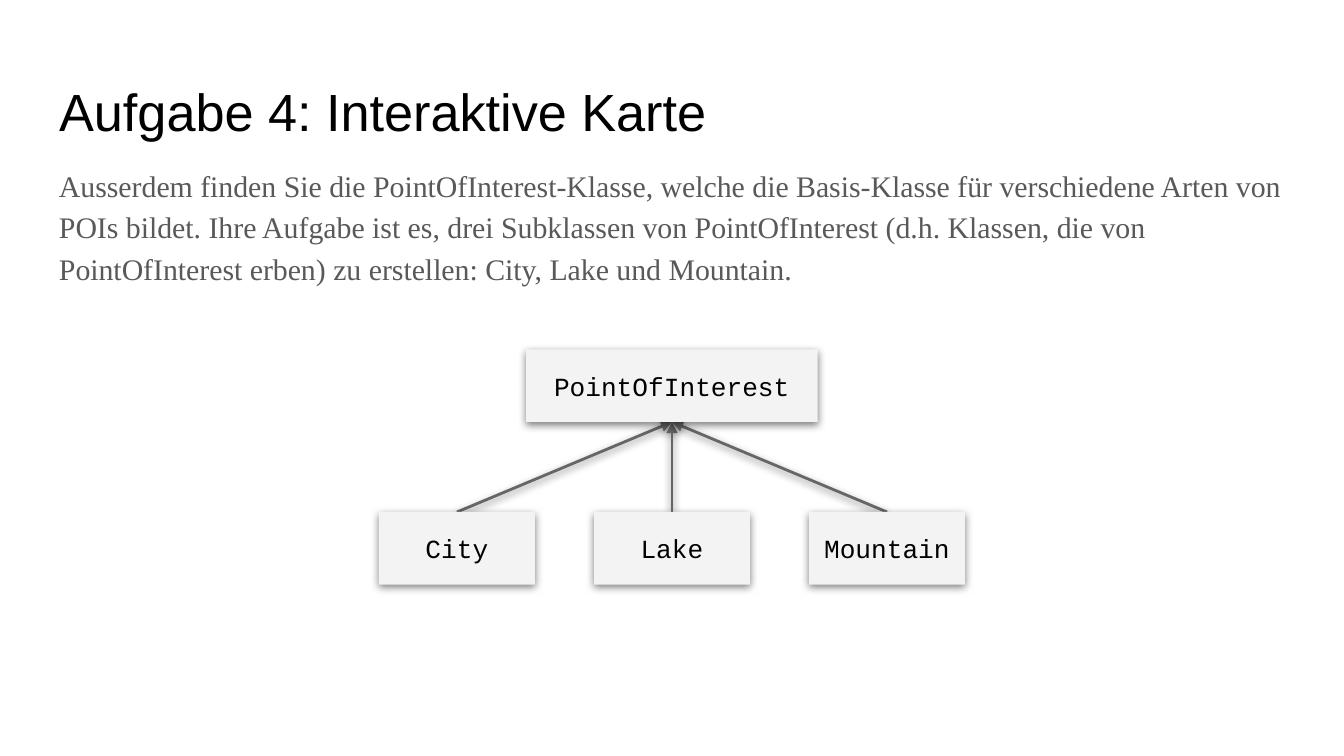
"""Build a slide that shows three subclasses inheriting from PointOfInterest."""
from dataclasses import dataclass

from lxml.etree import SubElement
from pptx import Presentation
from pptx.dml.color import RGBColor as Color
from pptx.enum.shapes import MSO_CONNECTOR as Connector, MSO_SHAPE as Preset
from pptx.enum.text import MSO_ANCHOR as Anchor, PP_ALIGN as Align
from pptx.oxml.ns import qn
from pptx.util import Pt

EMU_PER_PX = 4572
SLIDE_WIDTH, SLIDE_HEIGHT = 2000, 1125
MARGIN = 68
BOX_HEIGHT = 108
CHILD_WIDTH, CHILD_PITCH, CHILD_TOP = 232, 320, 762
PARENT_WIDTH, PARENT_TOP = 434, 520
INSET = 20
TOP_SITE, BOTTOM_SITE = 0, 2

TITLE = "Aufgabe 4: Interaktive Karte"
TASK = (
    "Ausserdem finden Sie die PointOfInterest-Klasse, welche die Basis-Klasse für "
    "verschiedene Arten von POIs bildet. Ihre Aufgabe ist es, drei Subklassen von "
    "PointOfInterest (d.h. Klassen, die von PointOfInterest erben) zu erstellen: "
    "City, Lake und Mountain."
)
PARENT = "PointOfInterest"
CHILDREN = ["City", "Lake", "Mountain"]


@dataclass(frozen=True)
class Theme:
    background: str = "FFFFFF"
    ink: str = "000000"
    body: str = "595959"
    box: str = "F3F3F3"
    arrow: str = "666666"
    shadow: str = "000000"
    title_font: str = "Arial"
    body_font: str = "Times New Roman"
    code_font: str = "Courier New"
    title_size: int = 28
    body_size: int = 16
    code_size: int = 14
    arrow_width: float = 1.5


THEME = Theme()


def px(*lengths):
    return [round(length * EMU_PER_PX) for length in lengths]


def place(shape, left, top, width, height):
    shape.left, shape.top, shape.width, shape.height = px(left, top, width, height)


def write(shape, text, *, font, size, color=THEME.ink, align=Align.LEFT,
          anchor=Anchor.TOP, spacing=1.0):
    frame = shape.text_frame
    frame.word_wrap = True
    frame.vertical_anchor = anchor
    inset = px(INSET)[0]
    frame.margin_left = frame.margin_top = inset
    frame.margin_right = frame.margin_bottom = inset
    paragraph = frame.paragraphs[0]
    paragraph.alignment = align
    paragraph.line_spacing = spacing
    run = paragraph.add_run()
    run.text = text
    run.font.name = font
    run.font.size = Pt(size)
    run.font.color.rgb = Color.from_string(color)


def add_shadow(shape):
    effects = SubElement(shape._element.spPr, qn("a:effectLst"))
    shadow = SubElement(effects, qn("a:outerShdw"), blurRad=str(Pt(4.5)),
                        dist=str(Pt(1.5)), dir="5400000", algn="bl",
                        rotWithShape="0")
    color = SubElement(shadow, qn("a:srgbClr"), val=THEME.shadow)
    SubElement(color, qn("a:alpha"), val="50000")


def add_title(slide, text):
    title = slide.shapes.title
    place(title, MARGIN, 98, SLIDE_WIDTH - 2 * MARGIN, 126)
    write(title, text, font=THEME.title_font, size=THEME.title_size)


def add_body(slide, text):
    body = slide.shapes.add_textbox(0, 0, 0, 0)
    place(body, MARGIN, 222, SLIDE_WIDTH - 2 * MARGIN, 242)
    write(body, text, font=THEME.body_font, size=THEME.body_size,
          color=THEME.body, spacing=1.15)


def add_class_box(slide, name, center, top, width):
    bounds = px(center - width / 2, top, width, BOX_HEIGHT)
    box = slide.shapes.add_shape(Preset.RECTANGLE, *bounds)
    box.fill.solid()
    box.fill.fore_color.rgb = Color.from_string(THEME.box)
    box.line.fill.background()
    add_shadow(box)
    write(box, name, font=THEME.code_font, size=THEME.code_size,
          align=Align.CENTER, anchor=Anchor.MIDDLE)
    return box


def add_inheritance_arrow(slide, child, parent):
    arrow = slide.shapes.add_connector(Connector.STRAIGHT, 0, 0, 0, 0)
    arrow.begin_connect(child, TOP_SITE)
    arrow.end_connect(parent, BOTTOM_SITE)
    arrow.line.color.rgb = Color.from_string(THEME.arrow)
    arrow.line.width = Pt(THEME.arrow_width)
    outline = arrow._element.spPr.find(qn("a:ln"))
    SubElement(outline, qn("a:tailEnd"), type="triangle", w="med", len="med")
    add_shadow(arrow)
    parent._element.addprevious(arrow._element)


def add_class_diagram(slide):
    middle = SLIDE_WIDTH / 2
    parent = add_class_box(slide, PARENT, middle, PARENT_TOP, PARENT_WIDTH)
    for index, name in enumerate(CHILDREN):
        center = middle + (index - (len(CHILDREN) - 1) / 2) * CHILD_PITCH
        child = add_class_box(slide, name, center, CHILD_TOP, CHILD_WIDTH)
        add_inheritance_arrow(slide, child, parent)


def main():
    presentation = Presentation()
    presentation.slide_width, presentation.slide_height = px(SLIDE_WIDTH, SLIDE_HEIGHT)
    slide = presentation.slides.add_slide(presentation.slide_layouts[5])
    slide.background.fill.solid()
    slide.background.fill.fore_color.rgb = Color.from_string(THEME.background)
    add_title(slide, TITLE)
    add_class_diagram(slide)
    add_body(slide, TASK)
    presentation.save("out.pptx")


if __name__ == "__main__":
    main()
